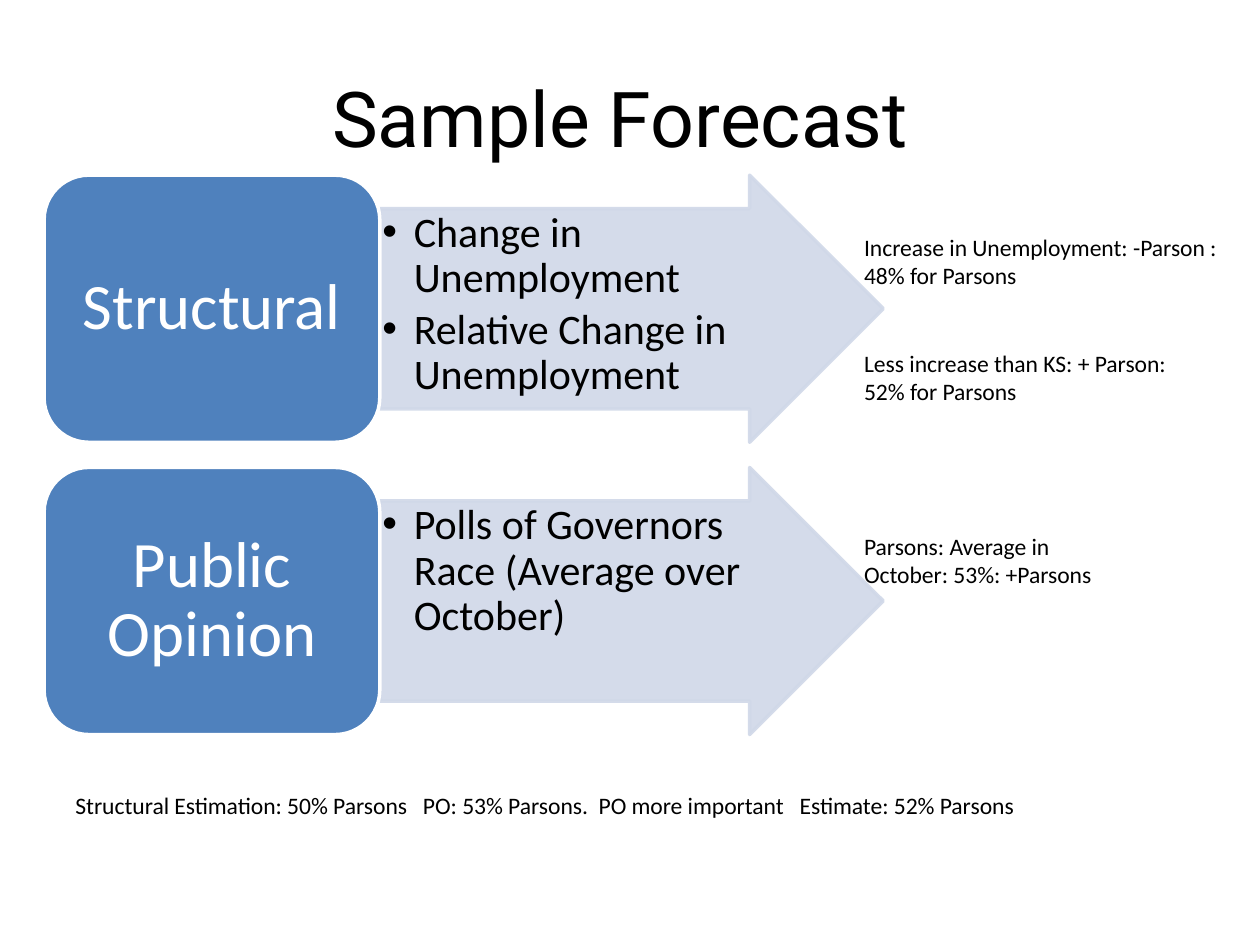
from lxml import etree
from pptx import Presentation
from pptx import util as u
from pptx.dml.color import RGBColor
from pptx.enum import shapes, text
from pptx.oxml.ns import qn

BLUE = RGBColor(0x4F, 0x81, 0xBD)
PALE = RGBColor(0xD0, 0xD8, 0xE8)
WHITE = RGBColor(0xFF, 0xFF, 0xFF)
BLACK = RGBColor(0, 0, 0)

ROW_LEFT, ROW_TOP, ROW_WIDTH, ROW_HEIGHT, ROW_STEP = 0.35, 1.39, 6.66, 2.12, 2.32
LABEL_SHARE = 0.4

ROWS = [
    ("Structural", ["Change in Unemployment", "Relative Change in Unemployment"]),
    ("Public Opinion", ["Polls of Governors Race (Average over October)"]),
]
NOTES = [
    ("Increase in Unemployment: -Parson : 48% for Parsons", (6.76, 1.8, 3.24, 0.56)),
    ("Less increase than KS: + Parson:\v52% for Parsons", (6.76, 2.72, 3.24, 0.56)),
    ("Parsons: Average in October: 53%: +Parsons", (6.76, 4.17, 2.36, 0.56)),
    ("Structural Estimation: 50% Parsons   PO: 53% Parsons.  "
     "PO more important   Estimate: 52% Parsons", (0.5, 6.23, 8.81, 0.33)),
]

LABEL_FRAME = dict(margin_left=u.Inches(0.15), margin_right=u.Inches(0.15),
                   margin_top=u.Inches(0.08), margin_bottom=u.Inches(0.08),
                   vertical_anchor=text.MSO_ANCHOR.MIDDLE, word_wrap=True)
ARROW_FRAME = dict.fromkeys(
    ("margin_left", "margin_right", "margin_top", "margin_bottom"), u.Inches(0.02))
ARROW_FRAME.update(vertical_anchor=text.MSO_ANCHOR.TOP, word_wrap=True)
LABEL_PARA = dict(alignment=text.PP_ALIGN.CENTER, line_spacing=0.9)
ARROW_PARA = dict(alignment=text.PP_ALIGN.LEFT, line_spacing=0.9, space_after=u.Pt(3.6))


def apply(target, values):
    for name, value in values.items():
        setattr(target, name, value)


def style_font(font, size, color, name="Calibri"):
    apply(font, dict(size=u.Pt(size), name=name))
    font.color.rgb = color


def add_bullet(para):
    props = para._p.get_or_add_pPr()
    props.set("marL", str(u.Inches(0.25)))
    props.set("indent", str(u.Inches(-0.25)))
    etree.SubElement(props, qn("a:buFont")).set("typeface", "Arial")
    etree.SubElement(props, qn("a:buChar")).set("char", "•")


def set_opacity(shape, percent):
    for color in shape._element.spPr.iter(qn("a:srgbClr")):
        etree.SubElement(color, qn("a:alpha")).set("val", str(percent * 1000))


def add_block(page, kind, box, fill, line, frame_format):
    shape = page.shapes.add_shape(kind, *map(u.Inches, box))
    shape.shadow.inherit = False
    shape.fill.solid()
    shape.fill.fore_color.rgb = fill
    shape.line.color.rgb = line
    shape.line.width = u.Pt(2)
    apply(shape.text_frame, frame_format)
    return shape


def add_title(page, box):
    title = page.shapes.title
    apply(title, dict(zip(("left", "top", "width", "height"), map(u.Inches, box))))
    title.text_frame.text = "Sample Forecast "
    title.text_frame.vertical_anchor = text.MSO_ANCHOR.MIDDLE
    para = title.text_frame.paragraphs[0]
    para.alignment = text.PP_ALIGN.CENTER
    style_font(para.font, 44, BLACK, "Roboto")


def add_row(page, box, label, points):
    left, top, width, height = box
    split = width * LABEL_SHARE

    arrow = add_block(page, shapes.MSO_SHAPE.RIGHT_ARROW,
                      (left + split, top, width - split, height), PALE, PALE, ARROW_FRAME)
    arrow.adjustments[0] = 0.75
    arrow.adjustments[1] = 0.5
    set_opacity(arrow, 90)
    frame = arrow.text_frame
    frame.text = "\n".join(points)
    for para in frame.paragraphs:
        add_bullet(para)
        apply(para, ARROW_PARA)
        style_font(para.font, 24, BLACK)

    block = add_block(page, shapes.MSO_SHAPE.ROUNDED_RECTANGLE,
                      (left, top, split, height), BLUE, WHITE, LABEL_FRAME)
    block.text_frame.text = label
    para = block.text_frame.paragraphs[0]
    apply(para, LABEL_PARA)
    style_font(para.font, 37, WHITE)


def add_note(page, box, words):
    frame = page.shapes.add_textbox(*map(u.Inches, box)).text_frame
    apply(frame, dict(word_wrap=True, auto_size=text.MSO_AUTO_SIZE.SHAPE_TO_FIT_TEXT))
    frame.text = words
    style_font(frame.paragraphs[0].font, 13.5, BLACK)


def main():
    deck = Presentation()
    apply(deck, dict(slide_width=u.Inches(10), slide_height=u.Inches(7.5)))
    page = deck.slides.add_slide(deck.slide_layouts[5])
    add_title(page, (0.5, 0.3, 9, 1.25))
    for index, (label, points) in enumerate(ROWS):
        top = ROW_TOP + index * ROW_STEP
        add_row(page, (ROW_LEFT, top, ROW_WIDTH, ROW_HEIGHT), label, points)
    for words, box in NOTES:
        add_note(page, box, words)
    deck.save("out.pptx")


if __name__ == "__main__":
    main()
